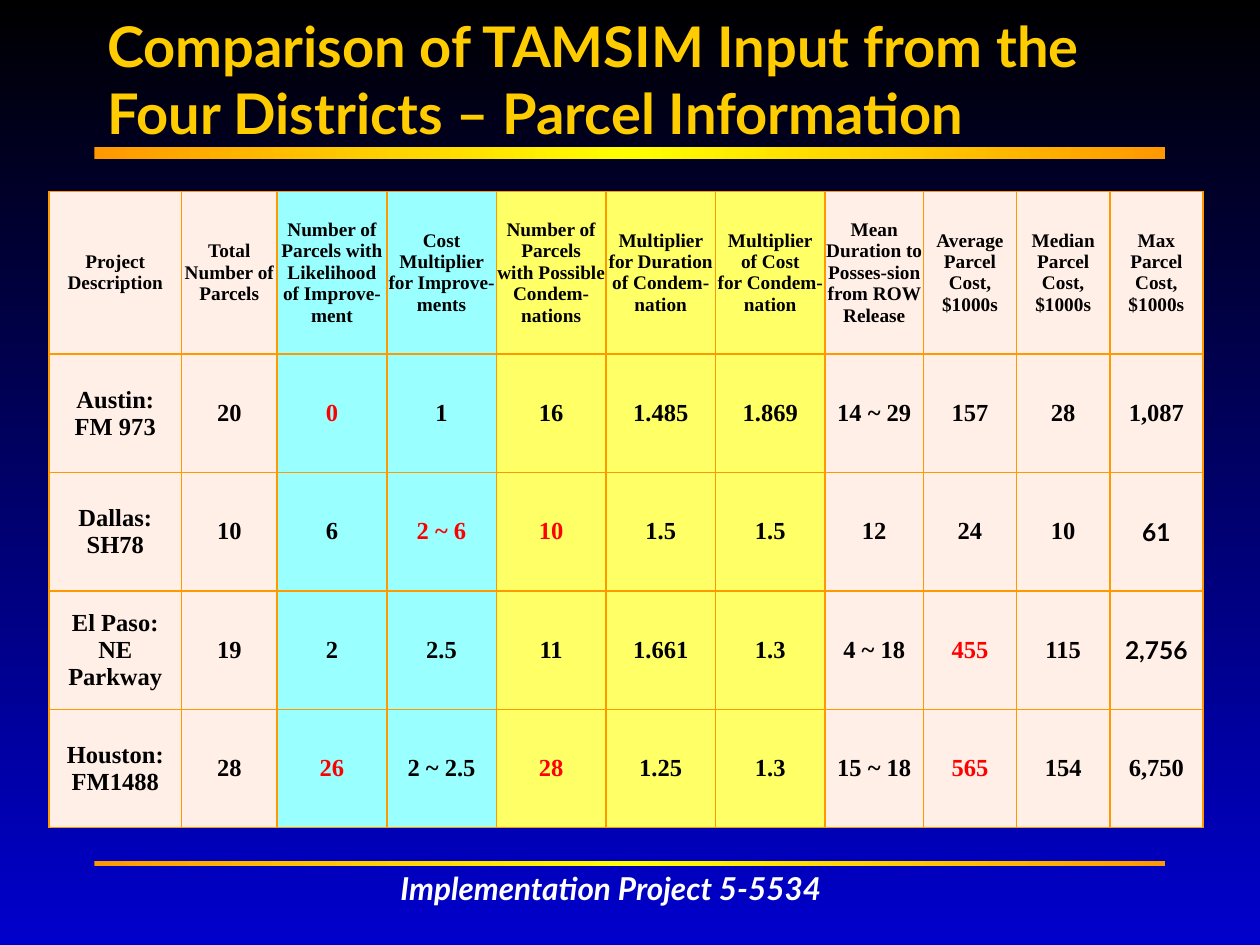
from copy import deepcopy
from dataclasses import dataclass

from lxml import etree
from pptx import Presentation
from pptx import util as u
from pptx.dml.color import RGBColor
from pptx.enum import shapes, text
from pptx.oxml.ns import qn

SANS, SERIF = "Lato", "Times New Roman"
PINK, CYAN, YELLOW = "FFEFE7", "99FFFF", "FFFF66"
BLACK, RED, ORANGE = "000000", "FF0000", "FF9900"


@dataclass
class Column:
    head: str
    width: float
    fill: str
    values: tuple[str, ...]


@dataclass
class Bar:
    top: float
    height: float


COLUMNS = [
    Column("Project Description", 1.05, PINK,
           ("Austin:\nFM 973", "Dallas: SH78", "El Paso:\nNE Parkway", "Houston: FM1488")),
    Column("Total Number of Parcels", 0.76, PINK, ("20", "10", "19", "28")),
    Column("Number of Parcels with Likelihood of Improve-ment", 0.87, CYAN,
           ("0", "6", "2", "26")),
    Column("Cost Multiplier for Improve-ments", 0.87, CYAN,
           ("1", "2 ~ 6", "2.5", "2 ~ 2.5")),
    Column("Number of Parcels\nwith Possible Condem-nations", 0.87, YELLOW,
           ("16", "10", "11", "28")),
    Column("Multiplier for Duration\nof Condem-nation", 0.87, YELLOW,
           ("1.485", "1.5", "1.661", "1.25")),
    Column("Multiplier\nof Cost\nfor Condem-nation", 0.87, YELLOW,
           ("1.869", "1.5", "1.3", "1.3")),
    Column("Mean Duration to Posses-sion from ROW Release", 0.78, PINK,
           ("14 ~ 29", "12", "4 ~ 18", "15 ~ 18")),
    Column("Average Parcel Cost, $1000s", 0.74, PINK, ("157", "24", "455", "565")),
    Column("Median Parcel Cost,\n$1000s", 0.74, PINK, ("28", "10", "115", "154")),
    Column("Max Parcel Cost,\n$1000s", 0.74, PINK, ("1,087", "61", "2,756", "6,750")),
]
ROWS = [1.29] + [0.94] * 4
BARS = [Bar(1.17, 0.09), Bar(6.83, 0.04)]

# Table places as (row, column)
RED_CELLS = {(1, 2), (2, 3), (2, 4), (3, 8), (4, 2), (4, 4), (4, 8)}
SANS_CELLS = {(2, 10), (3, 10)}


def tint(code: str) -> RGBColor:
    return RGBColor.from_string(code)


def style(frame, size: float, font: str, code: str, align, slant: bool = False) -> None:
    for para in frame.paragraphs:
        para.alignment = align
        for run in para.runs:
            run.font.size = u.Pt(size)
            run.font.name = font
            run.font.bold = True
            run.font.italic = slant
            run.font.color.rgb = tint(code)


def draw_bar(slide, bar: Bar) -> None:
    shape = slide.shapes.add_shape(
        shapes.MSO_SHAPE.RECTANGLE, u.Inches(0.75), u.Inches(bar.top),
        u.Inches(8.5), u.Inches(bar.height))
    shape.shadow.inherit = False
    shape.line.fill.background()
    shape.fill.gradient()
    shape.fill.gradient_angle = 0
    for stop in shape.fill.gradient_stops:
        stop.color.rgb = tint(ORANGE)
    # A third stop makes the yellow centre
    stops = shape.element.spPr.find(".//" + qn("a:gsLst"))
    centre = deepcopy(stops[0])
    centre.set("pos", "50000")
    centre[0].set("val", "FFFF00")
    stops.insert(1, centre)


def add_edges(cell) -> None:
    props = cell._tc.get_or_add_tcPr()
    for spot, side in enumerate(("lnL", "lnR", "lnT", "lnB")):
        line = etree.Element(qn("a:" + side), w=str(u.Pt(1)))
        fill = etree.SubElement(line, qn("a:solidFill"))
        etree.SubElement(fill, qn("a:srgbClr"), val=ORANGE)
        props.insert(spot, line)


def draw_cell(cell, words: str, fill: str, size: float, font: str, code: str) -> None:
    cell.margin_left = cell.margin_right = cell.margin_top = cell.margin_bottom = 0
    cell.vertical_anchor = text.MSO_ANCHOR.MIDDLE
    cell.fill.solid()
    cell.fill.fore_color.rgb = tint(fill)
    cell.text_frame.text = words
    style(cell.text_frame, size, font, code, text.PP_ALIGN.CENTER)
    add_edges(cell)


def draw_table(slide) -> None:
    width = sum(col.width for col in COLUMNS)
    table = slide.shapes.add_table(
        len(ROWS), len(COLUMNS), u.Inches(0.39), u.Inches(1.52),
        u.Inches(width), u.Inches(sum(ROWS))).table
    table.horz_banding = False
    for row, height in zip(table.rows, ROWS):
        row.height = u.Inches(height)
    for c, col in enumerate(COLUMNS):
        table.columns[c].width = u.Inches(col.width)
        for r, words in enumerate((col.head, *col.values)):
            draw_cell(table.cell(r, c), words, col.fill,
                      14 if r else 11,
                      SANS if (r, c) in SANS_CELLS else SERIF,
                      RED if (r, c) in RED_CELLS else BLACK)


def main() -> None:
    deck = Presentation()
    deck.slide_width, deck.slide_height = u.Inches(10), u.Inches(7.5)
    slide = deck.slides.add_slide(deck.slide_layouts[5])

    # Background, black down to blue
    back = slide.background.fill
    back.gradient()
    back.gradient_angle = 270
    for stop, code in zip(back.gradient_stops, (BLACK, "0000CC")):
        stop.color.rgb = tint(code)

    # Title
    title = slide.shapes.title
    title.left, title.top = u.Inches(0.75), u.Inches(0)
    title.width, title.height = u.Inches(8.5), u.Inches(1.25)
    frame = title.text_frame
    frame.text = "Comparison of TAMSIM Input from the Four Districts – Parcel Information"
    frame.auto_size = text.MSO_AUTO_SIZE.NONE
    frame.vertical_anchor = text.MSO_ANCHOR.MIDDLE
    style(frame, 32, SANS, "FFCC00", text.PP_ALIGN.LEFT)

    # Rules above and below the table
    for bar in BARS:
        draw_bar(slide, bar)

    # Footer
    foot = slide.shapes.add_textbox(
        u.Inches(3.08), u.Inches(6.85), u.Inches(3.94), u.Inches(0.4)).text_frame
    foot.word_wrap = True
    foot.text = "Implementation Project 5-5534"
    style(foot, 18, SANS, "FFFFFF", text.PP_ALIGN.LEFT, slant=True)

    draw_table(slide)
    deck.save("out.pptx")


if __name__ == "__main__":
    main()
